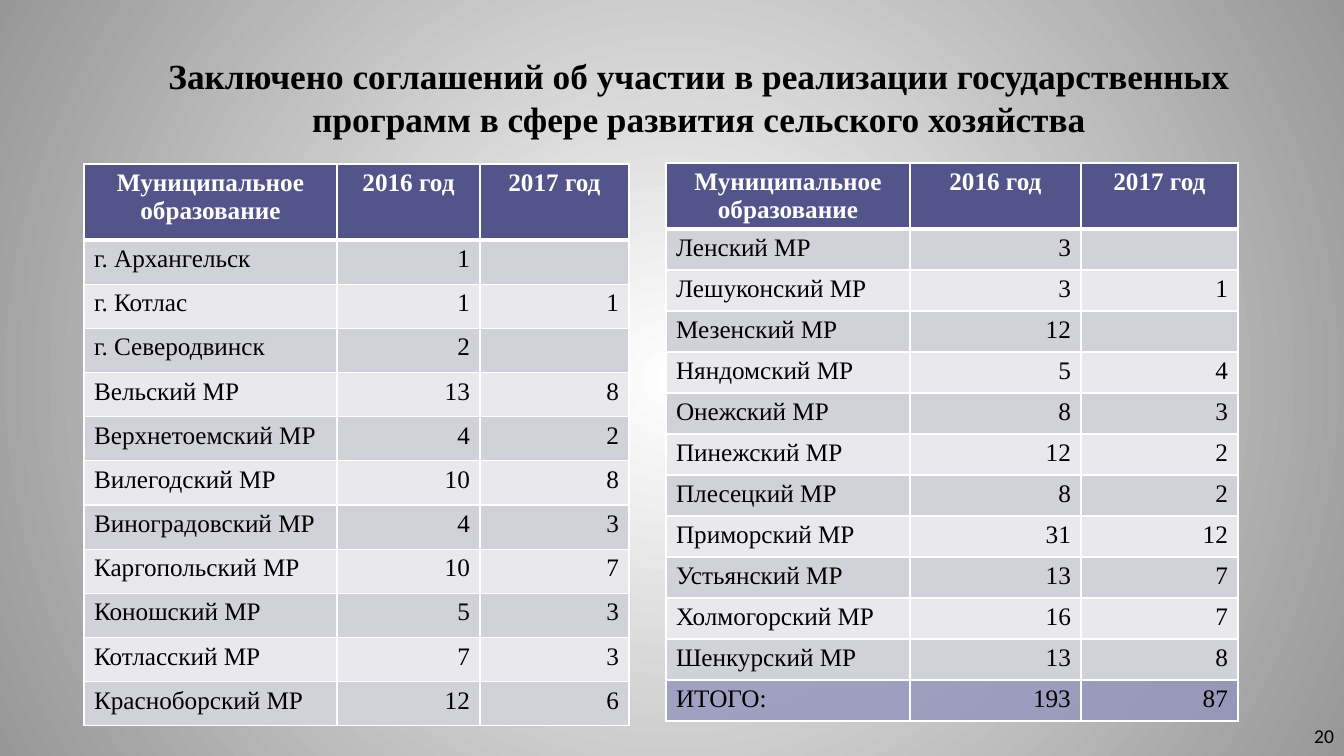
from dataclasses import dataclass

from lxml.etree import SubElement
from pptx import Presentation
from pptx.dml.color import RGBColor
from pptx.enum.text import MSO_ANCHOR, PP_ALIGN
from pptx.oxml.ns import qn
from pptx.util import Pt

SCALE = 914400 / 100.8
WIDE, HIGH = 1344, 756

HEADS = ("Муниципальное образование", "2016 год", "2017 год")
LEFT = (
    ("г. Архангельск", 1, ""),
    ("г. Котлас", 1, 1),
    ("г. Северодвинск", 2, ""),
    ("Вельский МР", 13, 8),
    ("Верхнетоемский МР", 4, 2),
    ("Вилегодский МР", 10, 8),
    ("Виноградовский МР", 4, 3),
    ("Каргопольский МР", 10, 7),
    ("Коношский МР", 5, 3),
    ("Котласский МР", 7, 3),
    ("Красноборский МР", 12, 6),
)
RIGHT = (
    ("Ленский МР", 3, ""),
    ("Лешуконский МР", 3, 1),
    ("Мезенский МР", 12, ""),
    ("Няндомский МР", 5, 4),
    ("Онежский МР", 8, 3),
    ("Пинежский МР", 12, 2),
    ("Плесецкий МР", 8, 2),
    ("Приморский МР", 31, 12),
    ("Устьянский МР", 13, 7),
    ("Холмогорский МР", 16, 7),
    ("Шенкурский МР", 13, 8),
)
TOTAL = ("ИТОГО:", 193, 87)


@dataclass(frozen=True)
class Theme:
    serif: str = "Times New Roman"
    sans: str = "Calibri"
    ink: str = "000000"
    white: str = "FFFFFF"
    edge: str = "979797"
    head: str = "53548A"
    bands: tuple = ("D1D1DA", "E9E9ED")
    total: str = "9394BE"
    title: float = 25.2
    cell: int = 18
    page: int = 14
    thin: int = 1
    thick: int = 3


def px(value):
    return round(value * SCALE)


def rgb(code):
    return RGBColor.from_string(code)


class Maker:
    def __init__(self, deck, theme):
        self.theme = theme
        self.slide = deck.slides.add_slide(deck.slide_layouts[5])

    def style(self, para, face, size, color, align, bold=False):
        para.alignment = align
        font = para.font
        font.name, font.size, font.bold = face, Pt(size), bold
        font.color.rgb = rgb(color)

    def backdrop(self):
        """Fill the background with a glow from the centre."""
        fill = self.slide.background.fill
        fill.gradient()
        for stop, color in zip(fill.gradient_stops, (self.theme.white, self.theme.edge)):
            stop.color.rgb = rgb(color)
        grad = self.slide.element.find(".//" + qn("a:gradFill"))
        grad.remove(grad.find(qn("a:lin")))
        glow = SubElement(grad, qn("a:path"), path="circle")
        SubElement(glow, qn("a:fillToRect"), dict.fromkeys("ltrb", "50000"))

    def title(self, text, x, y, w, h):
        box = self.slide.shapes.title
        box.left, box.top, box.width, box.height = map(px, (x, y, w, h))
        frame = box.text_frame
        frame.text = text
        frame.word_wrap = True
        frame.vertical_anchor = MSO_ANCHOR.MIDDLE
        self.style(frame.paragraphs[0], self.theme.serif, self.theme.title,
                   self.theme.ink, PP_ALIGN.CENTER, True)

    def page(self, text, x, y, w, h):
        frame = self.slide.shapes.add_textbox(*map(px, (x, y, w, h))).text_frame
        frame.text = text
        frame.word_wrap = True
        frame.vertical_anchor = MSO_ANCHOR.MIDDLE
        self.style(frame.paragraphs[0], self.theme.sans, self.theme.page,
                   self.theme.ink, PP_ALIGN.RIGHT)

    def border(self, cell, row):
        """Rule all four sides, thicker where the head meets the body."""
        theme = self.theme
        wide = {"T": row == 1, "B": row == 0}
        props = cell._tc.get_or_add_tcPr()
        for side in "LRTB":
            size = theme.thick if wide.get(side) else theme.thin
            line = SubElement(props, qn("a:ln" + side), w=str(Pt(size)))
            fill = SubElement(line, qn("a:solidFill"))
            SubElement(fill, qn("a:srgbClr"), val=theme.white)

    def cell(self, cell, text, row, col, color, alpha=None):
        theme = self.theme
        head = row == 0
        self.border(cell, row)
        cell.fill.solid()
        cell.fill.fore_color.rgb = rgb(color)
        if alpha:
            tint = cell._tc.tcPr.find(qn("a:solidFill") + "/" + qn("a:srgbClr"))
            SubElement(tint, qn("a:alpha"), val=str(alpha * 1000))
        cell.text = str(text)
        side = PP_ALIGN.RIGHT if col else PP_ALIGN.LEFT
        self.style(cell.text_frame.paragraphs[0], theme.serif, theme.cell,
                   theme.white if head else theme.ink,
                   PP_ALIGN.CENTER if head else side, head)

    def table(self, body, x, y, cols, high, top, total=None):
        """Draw a table whose head is top px high and whose rows share the rest."""
        theme = self.theme
        rows = [HEADS, *body] + ([total] if total else [])
        grid = self.slide.shapes.add_table(
            len(rows), len(cols), px(x), px(y), px(sum(cols)), px(high)).table
        for col, wide in zip(grid.columns, cols):
            col.width = px(wide)
        step = (high - top) / (len(rows) - 1)
        for r, values in enumerate(rows):
            grid.rows[r].height = px(step if r else top)
            color, alpha = theme.bands[(r - 1) % 2] if r else theme.head, None
            if values is total:
                color, alpha = theme.total, 80
            for c, value in enumerate(values):
                self.cell(grid.cell(r, c), value, r, c, color, alpha)


def main():
    deck = Presentation()
    deck.slide_width, deck.slide_height = px(WIDE), px(HIGH)
    maker = Maker(deck, Theme())
    maker.backdrop()
    maker.title("Заключено соглашений об участии в реализации государственных "
                "программ в сфере развития сельского хозяйства", 121, 30, 1156, 134)
    maker.table(LEFT, 84, 164, (253, 143, 149), 562, 76)
    maker.table(RIGHT, 666, 163, (244, 171, 157), 558, 66, TOTAL)
    maker.page("20", 1030, 716, 314, 40)
    deck.save("out.pptx")


if __name__ == "__main__":
    main()
